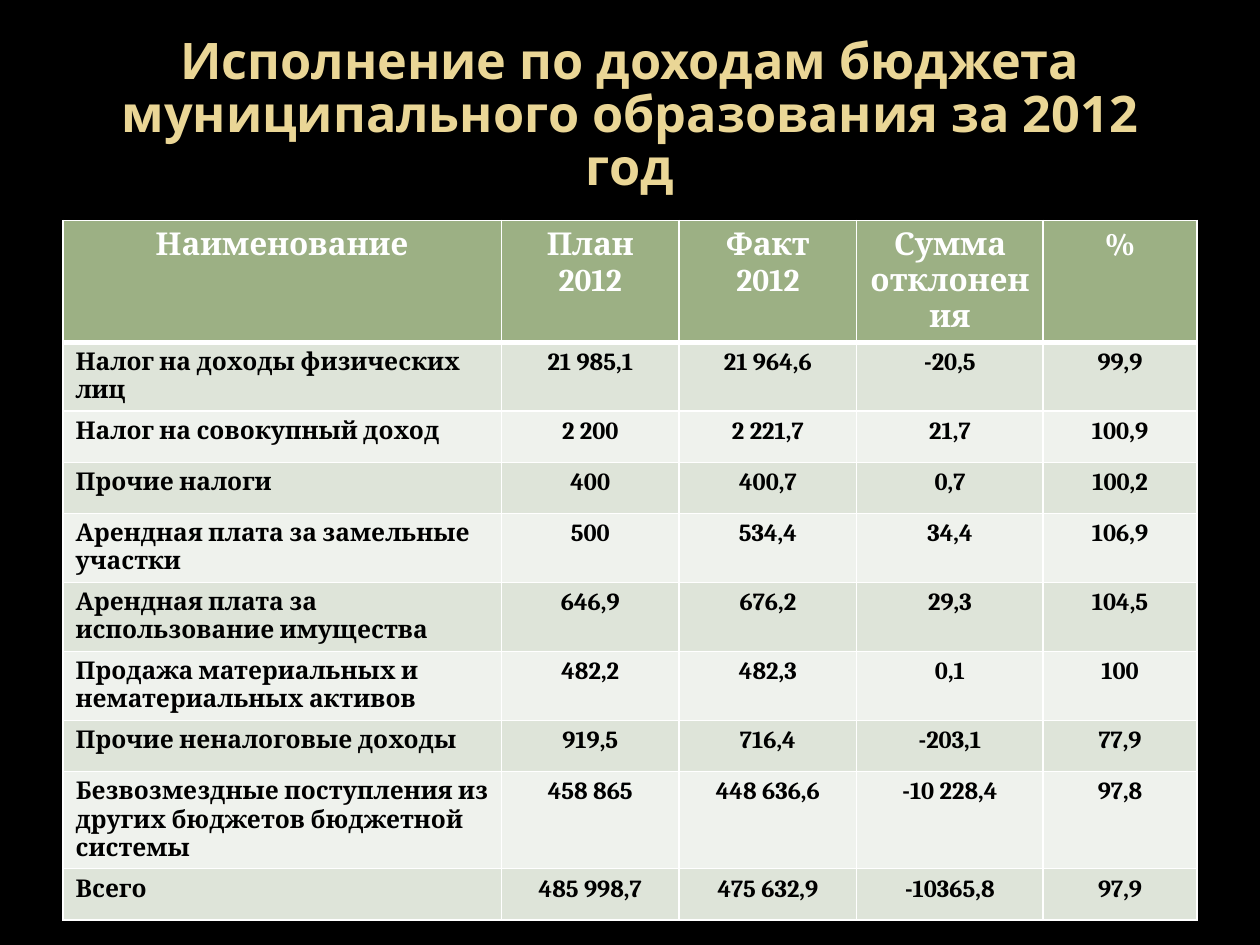
from lxml import etree
from pptx import Presentation
from pptx.dml.color import RGBColor
from pptx.enum.text import MSO_ANCHOR, MSO_AUTO_SIZE, PP_ALIGN
from pptx.oxml.ns import qn
from pptx.util import Pt

CENTER, LEFT = PP_ALIGN.CENTER, PP_ALIGN.LEFT
MIDDLE = MSO_ANCHOR.MIDDLE
NO_AUTOFIT = MSO_AUTO_SIZE.NONE

HEADING = "Исполнение по доходам бюджета муниципального образования за 2012 год"
COLUMNS = ["Наименование", "План 2012", "Факт 2012", "Сумма отклонения", "%"]
INCOME = [
    ("Налог на доходы физических лиц", "21 985,1", "21 964,6", "-20,5", "99,9"),
    ("Налог на совокупный доход", "2 200", "2 221,7", "21,7", "100,9"),
    ("Прочие налоги", "400", "400,7", "0,7", "100,2"),
    ("Арендная плата за замельные участки", "500", "534,4", "34,4", "106,9"),
    ("Арендная плата за использование имущества", "646,9", "676,2", "29,3", "104,5"),
    ("Продажа материальных и нематериальных активов", "482,2", "482,3", "0,1", "100"),
    ("Прочие неналоговые доходы", "919,5", "716,4", "-203,1", "77,9"),
    ("Безвозмездные поступления из других бюджетов бюджетной системы",
     "458 865", "448 636,6", "-10 228,4", "97,8"),
    ("Всего", "485 998,7", "475 632,9", "-10365,8", "97,9"),
]
COLUMN_WIDTHS = [250.56, 101.52, 101.52, 106.56, 87.84]
ROW_HEIGHT = 29.2
HEADER_FILL = "9CB084"
BAND_FILLS = ["DEE4D9", "EFF2ED"]
GRID_COLOR = "FFFFFF"


def paint(fill, color):
    fill.solid()
    fill.fore_color.rgb = RGBColor.from_string(color)


def style_text(frame, font_name, size, color, align):
    for paragraph in frame.paragraphs:
        paragraph.alignment = align
        for run in paragraph.runs:
            run.font.name = font_name
            run.font.size = Pt(size)
            run.font.bold = True
            paint(run.font.fill, color)


def set_borders(cell, widths):
    properties = cell._tc.get_or_add_tcPr()
    for index, (side, width) in enumerate(widths.items()):
        line = etree.Element(qn(f"a:{side}"), w=str(Pt(width)))
        solid = etree.SubElement(line, qn("a:solidFill"))
        etree.SubElement(solid, qn("a:srgbClr"), val=GRID_COLOR)
        properties.insert(index, line)


def add_heading(slide):
    heading = slide.shapes.title
    heading.left, heading.top, heading.width, heading.height = Pt(36), Pt(21.6), Pt(648), Pt(90)
    frame = heading.text_frame
    frame.text = HEADING
    frame.word_wrap = True
    frame.auto_size = NO_AUTOFIT
    frame.vertical_anchor = MIDDLE
    frame.paragraphs[0].line_spacing = 0.88
    style_text(frame, "Open Sans", 28.8, "EAD696", CENTER)


def add_income_table(slide):
    rows = [COLUMNS, *INCOME]
    table = slide.shapes.add_table(
        len(rows), len(COLUMNS), Pt(36), Pt(126),
        Pt(sum(COLUMN_WIDTHS)), Pt(ROW_HEIGHT * len(rows))).table
    for column, width in zip(table.columns, COLUMN_WIDTHS):
        column.width = Pt(width)
    for r, values in enumerate(rows):
        table.rows[r].height = Pt(ROW_HEIGHT)
        is_header = r == 0
        fill = HEADER_FILL if is_header else BAND_FILLS[(r - 1) % 2]
        size, color = (18, "FFFFFF") if is_header else (14, "000000")
        borders = {"lnL": 1, "lnR": 1, "lnT": 3 if r == 1 else 1, "lnB": 3 if is_header else 1}
        for c, value in enumerate(values):
            cell = table.cell(r, c)
            cell.text_frame.text = value
            align = CENTER if is_header or c > 0 else LEFT
            style_text(cell.text_frame, "Cambria", size, color, align)
            paint(cell.fill, fill)
            set_borders(cell, borders)


def main():
    deck = Presentation()
    deck.slide_width, deck.slide_height = Pt(720), Pt(540)
    slide = deck.slides.add_slide(deck.slide_layouts[5])
    paint(slide.background.fill, "000000")
    add_heading(slide)
    add_income_table(slide)
    deck.save("out.pptx")


if __name__ == "__main__":
    main()
